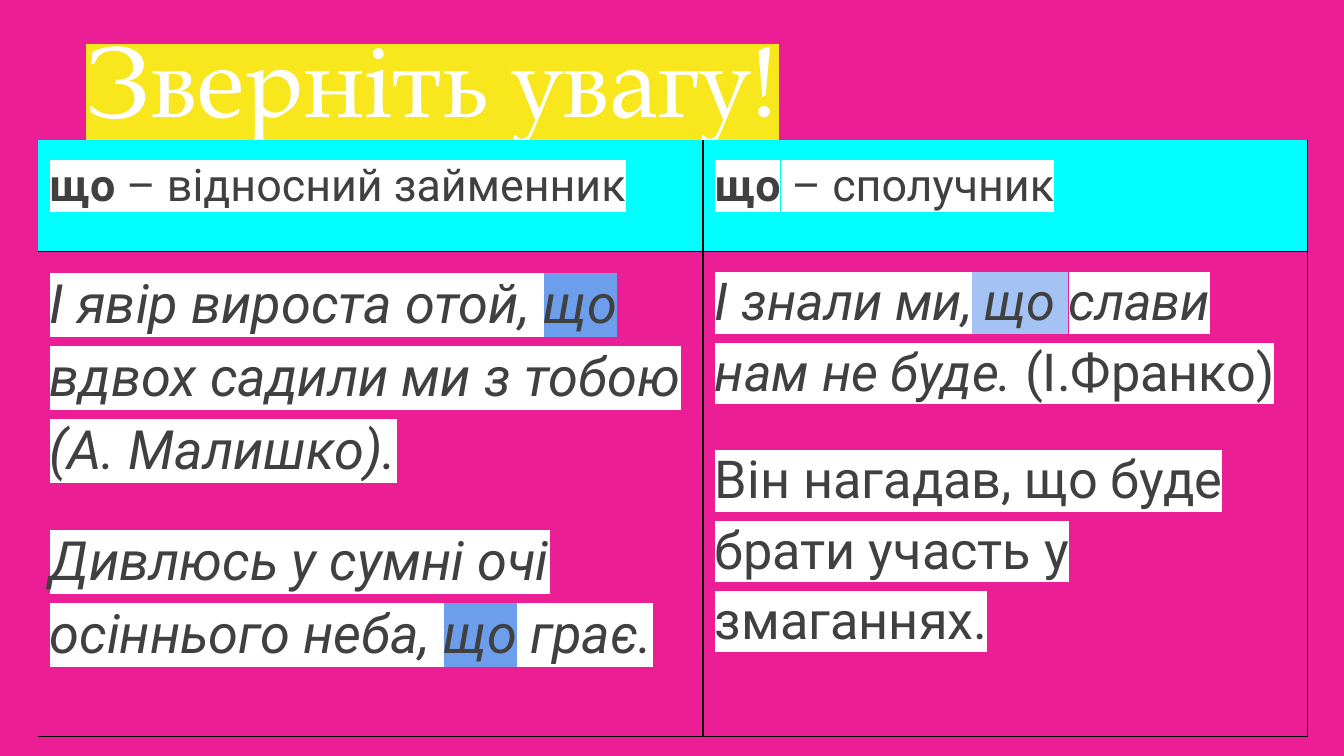
import pptx
import pptx.util
import pptx.dml.color
import pptx.enum.text
import pptx.oxml
import pptx.oxml.ns

Inches, Pt = pptx.util.Inches, pptx.util.Pt
RGB = pptx.dml.color.RGBColor.from_string
NS = pptx.oxml.ns.nsdecls("a")

COLORS = {
    "background": "EB1E95", "title": "FFFFFF", "title_mark": "F8E71C",
    "header": "00FFFF", "text": "404040", "line": "000000",
    "white": "FFFFFF", "blue": "6D9EEB", "pale": "A4C2F4",
}


def add_run(p, text, color, mark, **fmt):
    r = p.add_run()
    r.text = text
    for name, value in fmt.items():
        setattr(r.font, name, value)
    r.font.color.rgb = RGB(COLORS[color])
    highlight = pptx.oxml.parse_xml(
        f'<a:highlight {NS}><a:srgbClr val="{COLORS[mark]}"/></a:highlight>')
    r.font.fill._xPr.find(pptx.oxml.ns.qn("a:solidFill")).addnext(highlight)


def set_borders(cell, visible):
    tcPr = cell._tc.get_or_add_tcPr()
    for i, side in enumerate(("L", "R", "T", "B")):
        fill = (f'<a:solidFill><a:srgbClr val="{COLORS["line"]}"/></a:solidFill>'
                if side in visible else "<a:noFill/>")
        tcPr.insert(i, pptx.oxml.parse_xml(
            f'<a:ln{side} {NS} w="{Pt(0.75)}">{fill}</a:ln{side}>'))


# Widescreen 16:9 slide
prs = pptx.Presentation()
prs.slide_width = Inches(10)
prs.slide_height = Inches(10) * 9 // 16
s = prs.slides.add_slide(prs.slide_layouts[6])
s.background.fill.solid()
s.background.fill.fore_color.rgb = RGB(COLORS["background"])

# Title
sp = s.shapes.add_textbox(Inches(0.54), Inches(0.23), Inches(5.86), Inches(0.69))
tf = sp.text_frame
title_format = {
    "word_wrap": True, "vertical_anchor": pptx.enum.text.MSO_ANCHOR.MIDDLE,
    "margin_left": Inches(0.1), "margin_right": Inches(0.1),
    "margin_top": Inches(0.1), "margin_bottom": Inches(0.1),
}
for name, value in title_format.items():
    setattr(tf, name, value)
add_run(tf.paragraphs[0], "Зверніть увагу!", "title", "title_mark",
        size=Pt(54), name="TeX Gyre Pagella")

# Table content: cell -> size, paragraphs of (text, style, highlight)
cells = {
    (0, 0): (24, [[("що", "bold", "white"),
                   (" – відносний займенник", "", "white")]]),
    (0, 1): (24, [[("що", "bold", "white"), (" – сполучник", "", "white")]]),
    (1, 0): (29, [[("І явір вироста отой, ", "italic", "white"),
                   ("що ", "italic", "blue"),
                   ("вдвох садили ми з тобою (А. Малишко).", "italic", "white")],
                  [("Дивлюсь у сумні очі осіннього неба, ", "italic", "white"),
                   ("що", "italic", "blue"),
                   (" грає.", "italic", "white")]]),
    (1, 1): (28, [[("І", "italic", "white"), (" ", "", "white"),
                   ("знали ми,", "italic", "white"),
                   (" що ", "italic", "pale"),
                   ("слави нам не буде. ", "italic", "white"),
                   ("(І.Франко)", "", "white")],
                  [("Він нагадав, що буде брати участь у змаганнях.",
                    "", "white")]]),
}

# Table grid
table = s.shapes.add_table(2, 2, Inches(0.28), Inches(1.04),
                           Inches(9.45), Inches(4.44)).table
table.first_row = table.horz_banding = False
for column, width in zip(table.columns, (4.95, 4.5)):
    column.width = Inches(width)
for row, height in zip(table.rows, (0.83, 3.61)):
    row.height = Inches(height)

# Table cells
for (row, col), (size, paragraphs) in cells.items():
    cell = table.cell(row, col)
    for side in ("left", "right", "top", "bottom"):
        setattr(cell, f"margin_{side}", Inches(0.09))
    if row == 0:
        cell.fill.solid()
        cell.fill.fore_color.rgb = RGB(COLORS["header"])
    else:
        cell.fill.background()
    set_borders(cell, "RB" + ("L" if col else "") + ("T" if row else ""))

    tf = cell.text_frame
    for i, runs in enumerate(paragraphs):
        p = tf.add_paragraph() if i else tf.paragraphs[0]
        p.line_spacing = 1.15
        p.space_before = Pt(20 if i else 0)
        p.space_after = Pt(20 if row == 0 or i else 0)
        for text, style, mark in runs:
            add_run(p, text, "text", mark, size=Pt(size), name="Roboto",
                    bold=style == "bold", italic=style == "italic")

prs.save("out.pptx")
